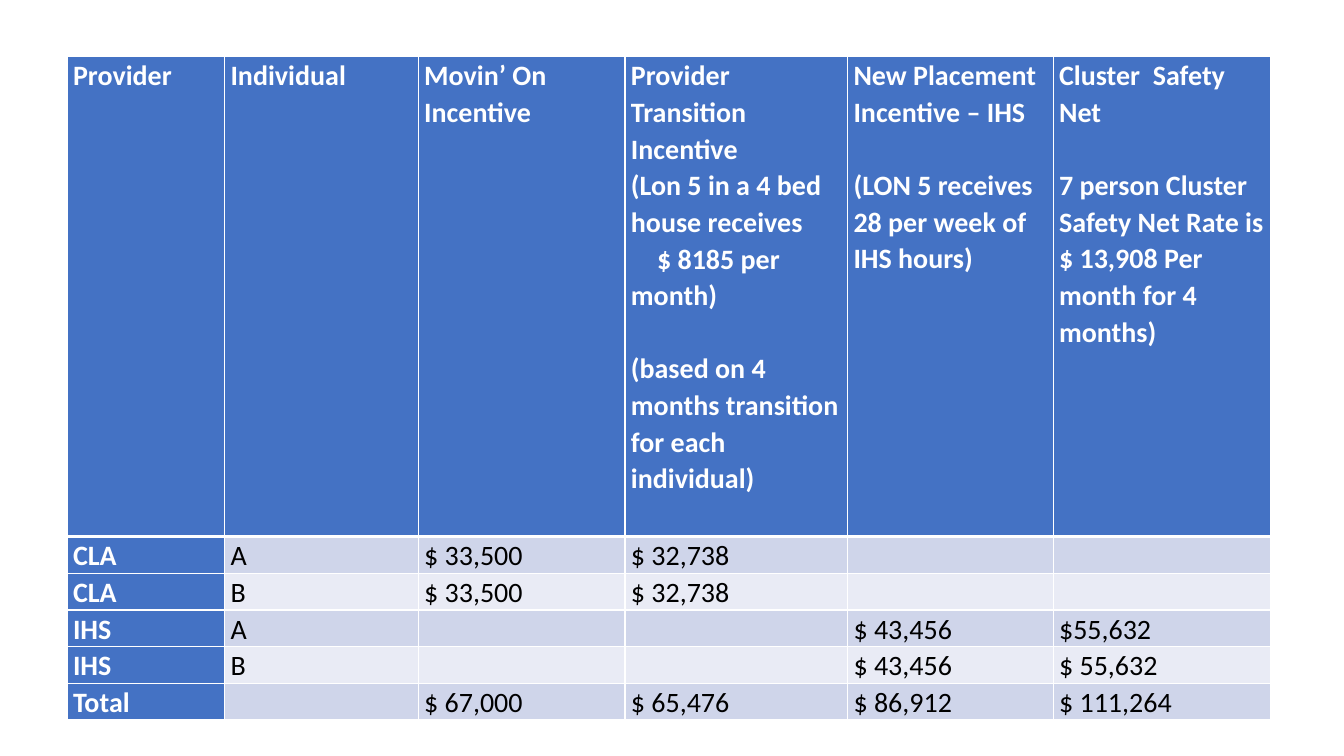
"""Build the slide with the incentive payments table."""
from dataclasses import dataclass

from lxml import etree
from pptx import Presentation
from pptx.dml.color import RGBColor
from pptx.oxml.ns import qn
from pptx.util import Cm, Pt

COLORS = {
    "header": "4472C4",
    "odd": "CFD5EA",
    "even": "E9EBF5",
    "light": "FFFFFF",
    "dark": "000000",
}
COLUMN_WIDTHS = (3.97, 4.88, 5.21, 5.61, 5.18, 5.47)
HEADER_HEIGHT, PAYMENT_HEIGHT = 12.09, 0.76
MARGINS = {
    "margin_left": Cm(0.15),
    "margin_right": Cm(0.15),
    "margin_top": 0,
    "margin_bottom": 0,
}
FONT = {"name": "Calibri", "size": Pt(20)}
THIN, THICK = Pt(1), Pt(3)
BLANK_LAYOUT = 6


@dataclass(frozen=True)
class Line:
    text: str
    gap_before: float = 0
    indent: float = 0
    tab_stop: float = 0


HEADINGS = (
    (Line("Provider"),),
    (Line("Individual"),),
    (Line("Movin’ On Incentive"),),
    (
        Line("Provider Transition Incentive"),
        Line("(Lon 5 in a 4 bed house receives"),
        Line("$ 8185 per month)", indent=0.66),
        Line("(based on 4 months transition for each individual)", gap_before=26),
    ),
    (
        Line("New Placement Incentive – IHS"),
        Line("(LON 5 receives 28 per week of IHS hours)", gap_before=26),
    ),
    (
        Line("Cluster  Safety Net"),
        Line(
            "7 person Cluster Safety Net Rate is\t$ 13,908 Per month for 4 months)",
            gap_before=26,
            tab_stop=1.42,
        ),
    ),
)
PAYMENTS = (
    ("CLA", "A", "$ 33,500", "$ 32,738", "", ""),
    ("CLA", "B", "$ 33,500", "$ 32,738", "", ""),
    ("IHS", "A", "", "", "$ 43,456", "$55,632"),
    ("IHS", "B", "", "", "$ 43,456", "$ 55,632"),
    ("Total", "", "$ 67,000", "$ 65,476", "$ 86,912", "$ 111,264"),
)


def rgb(color: str) -> RGBColor:
    return RGBColor.from_string(COLORS[color])


def set_borders(cell, top: int, bottom: int) -> None:
    properties = cell._tc.get_or_add_tcPr()
    for side, width in (("L", THIN), ("R", THIN), ("T", top), ("B", bottom)):
        border = etree.SubElement(properties, qn(f"a:ln{side}"), w=str(int(width)))
        fill = etree.SubElement(border, qn("a:solidFill"))
        etree.SubElement(fill, qn("a:srgbClr"), val=COLORS["light"])


def write_line(paragraph, line: Line, color: str, bold: bool) -> None:
    paragraph.line_spacing = 1.07
    paragraph.space_before = Pt(line.gap_before)
    properties = paragraph._p.get_or_add_pPr()
    if line.indent:
        properties.set("indent", str(int(Cm(line.indent))))
    if line.tab_stop:
        stops = etree.SubElement(properties, qn("a:tabLst"))
        position = str(int(Cm(line.tab_stop)))
        etree.SubElement(stops, qn("a:tab"), pos=position, algn="l")
    run = paragraph.add_run()
    run.text = line.text
    for attribute, value in {**FONT, "bold": bold}.items():
        setattr(run.font, attribute, value)
    run.font.color.rgb = rgb(color)


def fill_cell(cell, lines: tuple[Line, ...], row: int, column: int) -> None:
    is_heading = row == 0 or column == 0
    for attribute, value in MARGINS.items():
        setattr(cell, attribute, value)
    set_borders(cell, THICK if row == 1 else THIN, THICK if row == 0 else THIN)
    cell.fill.solid()
    band = "odd" if row % 2 else "even"
    cell.fill.fore_color.rgb = rgb("header" if is_heading else band)
    frame = cell.text_frame
    for number, line in enumerate(lines):
        paragraph = frame.add_paragraph() if number else frame.paragraphs[0]
        write_line(paragraph, line, "light" if is_heading else "dark", is_heading)


def add_payment_table(slide) -> None:
    rows = [HEADINGS]
    rows += [
        tuple((Line(text),) if text else () for text in payment)
        for payment in PAYMENTS
    ]
    heights = (HEADER_HEIGHT,) + (PAYMENT_HEIGHT,) * len(PAYMENTS)
    table = slide.shapes.add_table(
        len(rows), len(COLUMN_WIDTHS), Cm(1.69), Cm(1.43),
        Cm(sum(COLUMN_WIDTHS)), Cm(sum(heights)),
    ).table
    for table_column, width in zip(table.columns, COLUMN_WIDTHS):
        table_column.width = Cm(width)
    for row, (contents, height) in enumerate(zip(rows, heights)):
        table.rows[row].height = Cm(height)
        for column, lines in enumerate(contents):
            fill_cell(table.cell(row, column), lines, row, column)


def main() -> None:
    presentation = Presentation()
    presentation.slide_width = Cm(33.87)
    presentation.slide_height = Cm(19.05)
    slide = presentation.slides.add_slide(presentation.slide_layouts[BLANK_LAYOUT])
    add_payment_table(slide)
    presentation.save("out.pptx")


if __name__ == "__main__":
    main()
